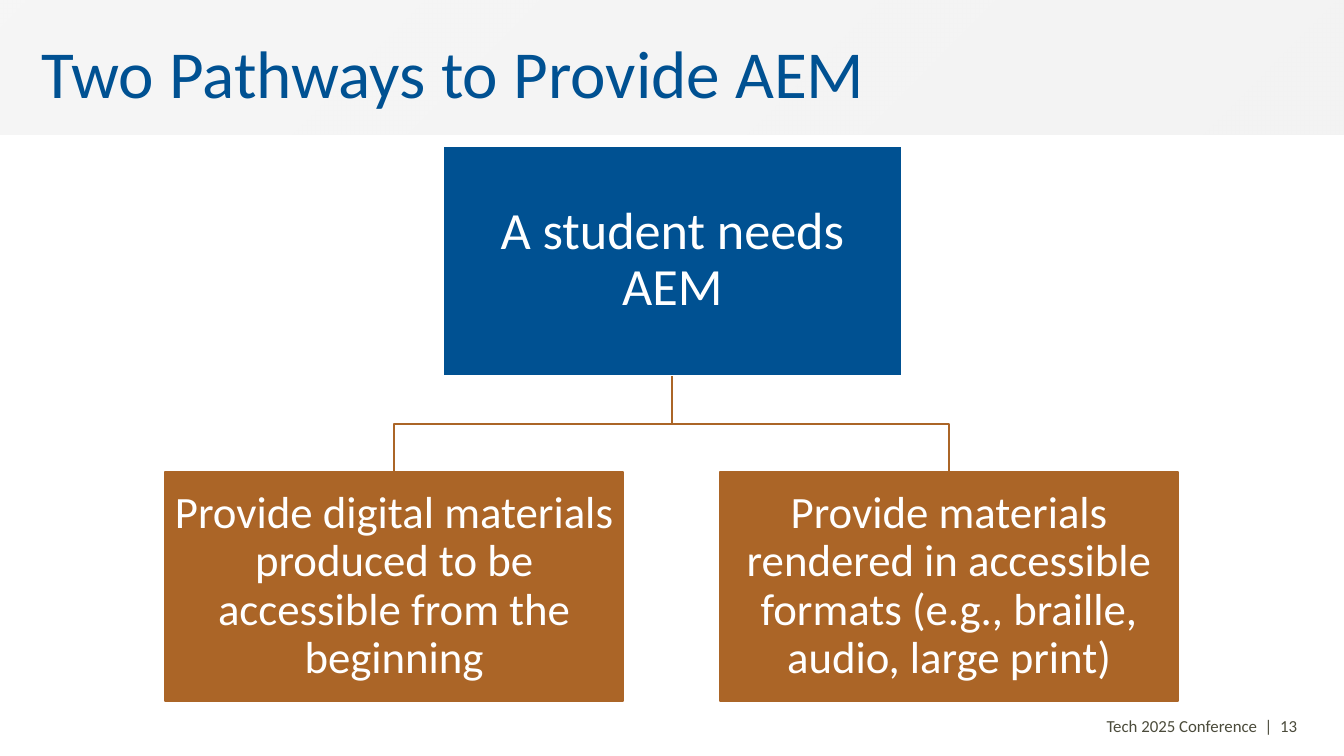
from lxml.etree import SubElement
from pptx import Presentation
from pptx.dml.color import RGBColor
from pptx.enum.shapes import MSO_SHAPE
from pptx.enum.text import MSO_ANCHOR, PP_ALIGN
from pptx.oxml.ns import qn
from pptx.util import Pt

BLUE = RGBColor(0x00, 0x51, 0x92)
BROWN = RGBColor(0xAB, 0x65, 0x27)
WHITE = RGBColor(0xFF, 0xFF, 0xFF)
GREY = RGBColor(0xE1, 0xE1, 0xE1)
OLIVE = RGBColor(0x4B, 0x4B, 0x3B)

WIDE, HIGH = 720, 405
MID = WIDE / 2 - 0.2
BOX_W, BOX_H = 245.7, 123
TOP, LOW = 78.2, 252.7
STEP = 148.65  # from the middle to the centre of each lower box

PATHS = [
    "Provide digital materials produced to be accessible from the beginning",
    "Provide materials rendered in accessible formats (e.g., braille, audio, large print)",
]


def write(shape, text, size, color, align, pads, space=0.9):
    """Put one line of styled text in a shape; pads are left, top, right, bottom."""
    frame = shape.text_frame
    frame.word_wrap = True
    frame.vertical_anchor = MSO_ANCHOR.MIDDLE
    frame.margin_left, frame.margin_top, frame.margin_right, frame.margin_bottom = map(Pt, pads)
    para = frame.paragraphs[0]
    para.alignment = align
    para.line_spacing = space
    run = para.add_run()
    run.text = text
    run.font.name = "Calibri"
    run.font.size = Pt(size)
    run.font.color.rgb = color


def add_label(slide, place, *style):
    write(slide.shapes.add_textbox(*map(Pt, place)), *style)


def add_band(slide):
    band = slide.shapes.add_shape(MSO_SHAPE.RECTANGLE, 0, 0, Pt(WIDE), Pt(72))
    band.shadow.inherit = False
    band.line.fill.background()
    band.fill.gradient()
    band.fill.gradient_angle = 315
    for stop, alpha in zip(band.fill.gradient_stops, (30, 40)):
        stop.color.rgb = GREY
    # Transparency of the two stops
    tints = band.fill._xPr.iter(qn("a:srgbClr"))
    for tint, alpha in zip(list(tints), (30, 40)):
        SubElement(tint, qn("a:alpha")).set("val", str(alpha * 1000))


def add_box(slide, mid, top, text, size, fill, edge):
    box = slide.shapes.add_shape(
        MSO_SHAPE.RECTANGLE, Pt(mid - BOX_W / 2), Pt(top), Pt(BOX_W), Pt(BOX_H))
    box.shadow.inherit = False
    box.fill.solid()
    box.fill.fore_color.rgb = fill
    box.line.color.rgb = edge
    box.line.width = Pt(1)
    write(box, text, size, WHITE, PP_ALIGN.CENTER, [1.4] * 4)


def add_branch(slide, end):
    start = TOP + BOX_H
    bend = (start + LOW) / 2
    pen = slide.shapes.build_freeform(Pt(MID), Pt(start))
    spots = [(MID, bend), (end, bend), (end, LOW)]
    pen.add_line_segments([(Pt(x), Pt(y)) for x, y in spots], close=False)
    branch = pen.convert_to_shape()
    branch.shadow.inherit = False
    branch.fill.background()
    branch.line.color.rgb = BROWN
    branch.line.width = Pt(1)


def main():
    deck = Presentation()
    deck.slide_width, deck.slide_height = Pt(WIDE), Pt(HIGH)
    slide = deck.slides.add_slide(deck.slide_layouts[6])

    # Footer, header band and title
    add_label(slide, (532.8, 378, 162, 21.6), "Tech 2025 Conference  |  13",
              9, OLIVE, PP_ALIGN.RIGHT, (7.2, 3.6, 0, 3.6), 1.0)
    add_band(slide)
    add_label(slide, (22.3, 15.8, 684, 50.4), "Two Pathways to Provide AEM",
              36, BLUE, PP_ALIGN.LEFT, [0] * 4)

    # Tree: branches behind, boxes in front
    ends = [MID + STEP, MID - STEP]
    for end in ends:
        add_branch(slide, end)
    add_box(slide, MID + 0.4, TOP, "A student needs AEM", 28, BLUE, WHITE)
    for end, text in zip(reversed(ends), PATHS):
        add_box(slide, end, LOW, text, 24, BROWN, BROWN)

    deck.save("out.pptx")


if __name__ == "__main__":
    main()
